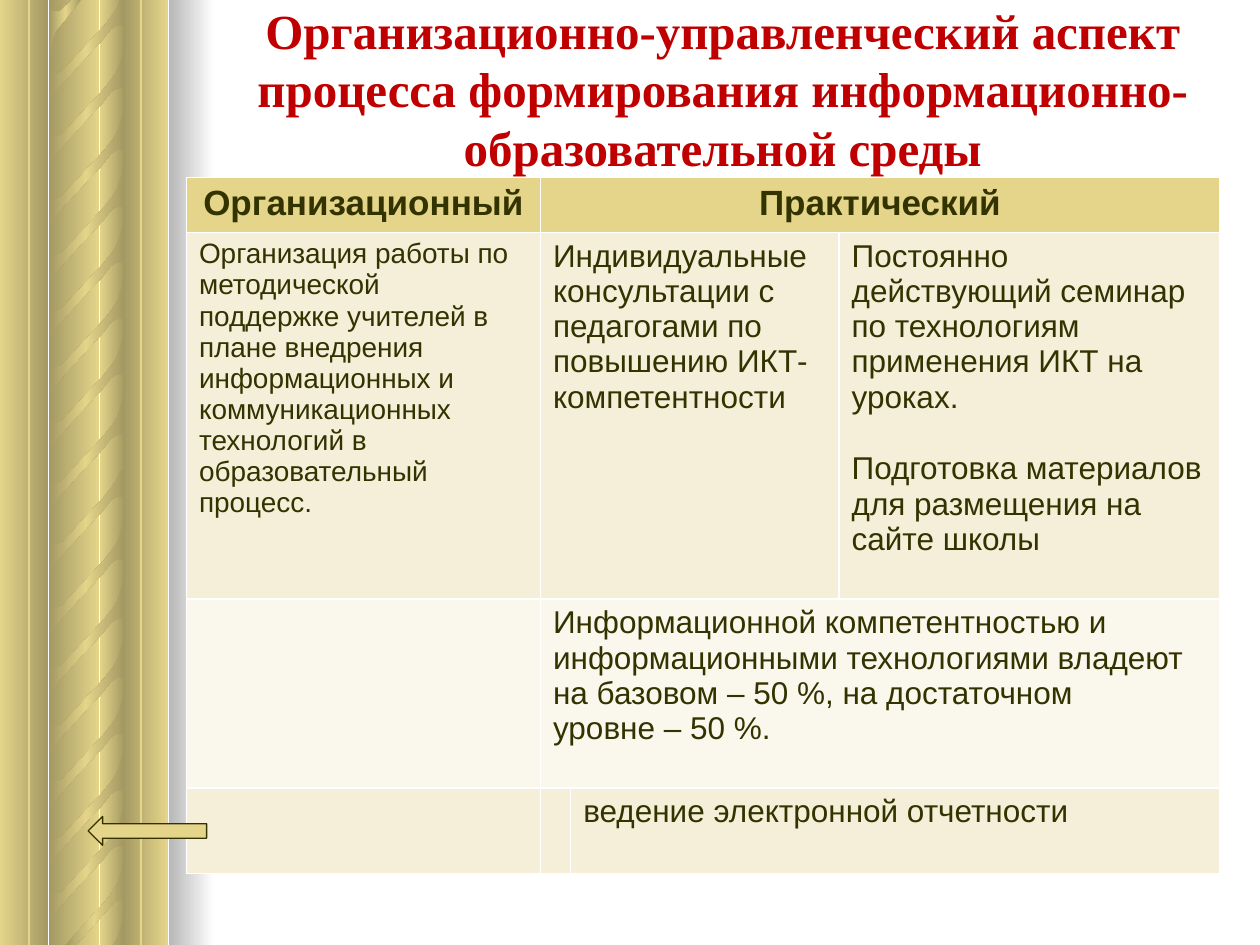
from lxml import etree
from pptx import Presentation, util as u
from pptx.dml.color import RGBColor
from pptx.enum import shapes, text
from pptx.oxml.ns import nsdecls, qn

WIDTH, HEIGHT = 10, 7.5
COLORS = {"gold": "E5D58A", "white": "FFFFFF", "red": "C00000", "ink": "333300",
          "band": "F5EFDA", "pale": "FAF7ED"}
TITLE = ("Организационно-управленческий аспект процесса формирования "
         "информационно-образовательной среды\v")

COLUMNS = [2.81, 0.23, 2.13, 3.02]
ROWS = [0.41, 2.91, 1.5, 0.68]
ROW_FILLS = ["gold", "band", "pale", "band"]
# row, column, columns spanned, text size, paragraphs
CELLS = [
    (0, 0, 1, 20, ["Организационный"]),
    (0, 1, 3, 20, ["Практический"]),
    (1, 0, 1, 16, ["Организация работы по",
                   "методической поддержке учителей в плане внедрения "
                   "информационных и коммуникационных",
                   "технологий в образовательный процесс."]),
    (1, 1, 2, 18, ["Индивидуальные", "консультации с", "педагогами по",
                   "повышению ИКТ-", "компетентности"]),
    (1, 3, 1, 18, ["Постоянно действующий семинар по технологиям применения ИКТ на уроках.",
                   "Подготовка материалов для размещения на сайте школы"]),
    (2, 1, 3, 18, ["Информационной компетентностью и информационными технологиями владеют "
                   "на базовом – 50 %, на достаточном", "уровне – 50 %."]),
    (3, 2, 2, 18, ["ведение электронной отчетности"]),
]
SECTION_GAP = {(1, 3): 20.7}  # points before the second paragraph

# Gradient stops: position, colour, shaded or not
LIGHT_TO_DARK = [(0, "gold", False), (100, "gold", True)]
DARK_TO_LIGHT = [(0, "gold", True), (100, "gold", False)]
TWIST = [(0, "gold", True), (50, "gold", False), (100, "gold", True)]
SHADOW = [(0, "white", True), (100, "white", False)]
PILLARS = [(0.79, 0.2, LIGHT_TO_DARK), (0, 0.38, LIGHT_TO_DARK),
           (0.39, 0.4, DARK_TO_LIGHT), (0.98, 0.35, DARK_TO_LIGHT)]
GROOVES = [0.23, 1.12]

HALF_TOPS = [-0.01, 3.73]
STRAND = [(0.98, 0.09), (0.98, 0.34), (0.97, 0.33), (0.93, 0.33), (0.91, 0.34), (0.88, 0.36),
          (0.81, 0.45), (0.64, 0.63), (0.47, 0.82), (0.44, 0.87), (0.41, 0.93), (0.4, 1.01),
          (0.39, 1.12), (0.39, 0.63), (0.39, 0.68), (0.4, 0.7), (0.42, 0.71), (0.44, 0.71),
          (0.46, 0.71), (0.49, 0.7), (0.83, 0.33), (0.9, 0.24), (0.93, 0.19), (0.95, 0.14),
          (0.97, 0.07), (0.98, 0), (0.98, 0.2)]
# Top of each strand, and the edge where its upper end is cut
STRANDS = [(top, top) for top in (4.58, 5.05, 5.49, 5.94, 6.38, 4.11,
                                  0.86, 1.31, 1.75, 2.2, 2.64, 0.37, 3.12)]
STRANDS += [(top - 0.12, top) for top in HALF_TOPS]
STRAND_ENDS = [
    [(0.98, 6.92), (0.98, 7.16), (0.97, 7.15), (0.93, 7.15), (0.91, 7.16), (0.88, 7.19),
     (0.8, 7.28), (0.64, 7.46), (0.6, 7.5), (0.52, 7.5), (0.83, 7.16), (0.9, 7.07),
     (0.93, 7.02), (0.95, 6.97), (0.97, 6.89), (0.98, 6.83)],
    [(0.98, 7.34), (0.98, 7.5), (0.38, 7.5), (0.9, 7.5), (0.93, 7.45), (0.95, 7.4),
     (0.97, 7.32), (0.98, 7.25)],
    [(0.65, -0.01), (0.48, 0.2), (0.44, 0.25), (0.42, 0.31), (0.41, 0.39), (0.39, 0.5),
     (0.39, 0.01), (0.4, 0.06), (0.41, 0.08), (0.42, 0.09), (0.44, 0.09), (0.47, 0.09),
     (0.49, 0.08), (0.58, -0.01)],
]


def rgb(name):
    return RGBColor.from_string(COLORS[name])


def fill_gradient(shape, stops):
    """Fill from left to right; shaded stops keep 47 % of the colour's light."""
    shape.shadow.inherit = False
    shape.line.fill.background()
    shape.fill.background()
    marks = "".join(
        f'<a:gs pos="{pos * 1000}"><a:srgbClr val="{COLORS[color]}">'
        f'{"<a:shade val=" + chr(34) + "47000" + chr(34) + "/>" if shaded else ""}'
        '</a:srgbClr></a:gs>' for pos, color, shaded in stops)
    gradient = etree.fromstring(f'<a:gradFill {nsdecls("a")} rotWithShape="1">'
                                f'<a:gsLst>{marks}</a:gsLst><a:lin ang="0" scaled="1"/></a:gradFill>')
    properties = shape._element.spPr
    properties.replace(properties.find(qn("a:noFill")), gradient)


def add_bar(page, left, top, width, height, stops):
    bar = page.shapes.add_shape(shapes.MSO_SHAPE.RECTANGLE,
                                *map(u.Inches, (left, top, width, height)))
    fill_gradient(bar, stops)


def add_outline(page, points):
    start, *rest = [(u.Inches(x), u.Inches(y)) for x, y in points]
    builder = page.shapes.build_freeform(*start)
    builder.add_line_segments(rest, close=False)
    fill_gradient(builder.convert_to_shape(), TWIST)


def add_column(page):
    for top in reversed(HALF_TOPS):
        for left, width, stops in PILLARS:
            add_bar(page, left, top, width, 3.77, stops)
    for top, edge in STRANDS:
        add_outline(page, [(x, max(top + y, edge)) for x, y in STRAND])
    for points in STRAND_ENDS:
        add_outline(page, points)
    add_bar(page, 1.34, 0, 0.36, HEIGHT, SHADOW)
    for x in GROOVES:
        groove = page.shapes.add_connector(shapes.MSO_CONNECTOR.STRAIGHT, u.Inches(x), 0,
                                           u.Inches(x), u.Inches(HEIGHT))
        groove.line.color.rgb = rgb("gold")
        groove.line.width = u.Pt(1)
        etree.SubElement(groove._element.spPr, qn("a:effectLst"))


def style(para, size, font, color, bold):
    para.font.size, para.font.name, para.font.bold = u.Pt(size), font, bold
    para.font.color.rgb = rgb(color)


def add_title(page):
    box = page.shapes.add_textbox(*map(u.Inches, (1.64, 0.31, 8.19, 1.25)))
    frame = box.text_frame
    frame.word_wrap = True
    frame.vertical_anchor = text.MSO_ANCHOR.MIDDLE
    para = frame.paragraphs[0]
    para.text = TITLE
    para.alignment = text.PP_ALIGN.CENTER
    style(para, 28, "Times New Roman", "red", True)


def add_aspects(page):
    table = page.shapes.add_table(len(ROWS), len(COLUMNS), *map(
        u.Inches, (1.48, 1.41, sum(COLUMNS), sum(ROWS)))).table
    for column, width in zip(table.columns, COLUMNS):
        column.width = u.Inches(width)
    for row, height, fill in zip(table.rows, ROWS, ROW_FILLS):
        row.height = u.Inches(height)
        for cell in row.cells:
            cell.fill.solid()
            cell.fill.fore_color.rgb = rgb(fill)
    for row, column, span, size, lines in CELLS:
        cell = table.cell(row, column)
        if span > 1:
            cell.merge(table.cell(row, column + span - 1))
        cell.text_frame.text = "\n".join(lines)
        for para in cell.text_frame.paragraphs:
            style(para, size, "Arial", "ink", row == 0)
            if row == 0:
                para.alignment = text.PP_ALIGN.CENTER
        if (row, column) in SECTION_GAP:
            para.space_before = u.Pt(SECTION_GAP[row, column])


def add_back_arrow(page):
    arrow = page.shapes.add_shape(shapes.MSO_SHAPE.LEFT_ARROW,
                                  *map(u.Inches, (0.7, 6.48, 0.94, 0.23)))
    arrow.shadow.inherit = False
    arrow.fill.solid()
    arrow.fill.fore_color.rgb = rgb("gold")
    arrow.line.color.rgb = rgb("ink")
    arrow.line.width = u.Pt(0.75)


def main():
    deck = Presentation()
    deck.slide_width, deck.slide_height = u.Inches(WIDTH), u.Inches(HEIGHT)
    page = deck.slides.add_slide(deck.slide_layouts[6])
    add_column(page)
    add_title(page)
    add_aspects(page)
    add_back_arrow(page)
    deck.save("out.pptx")


if __name__ == "__main__":
    main()
